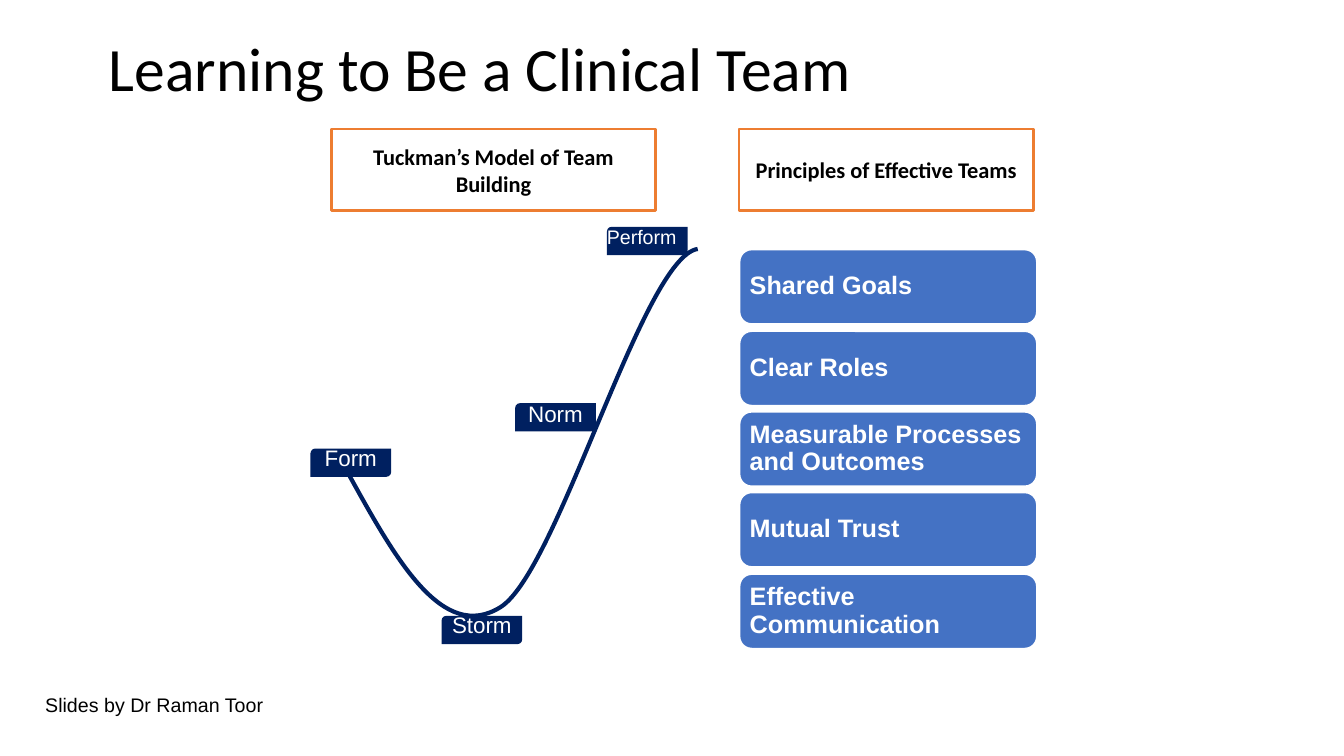
import dataclasses

import pptx
import pptx.dml.color
import pptx.enum.shapes
import pptx.enum.text
import pptx.oxml
import pptx.oxml.ns
import pptx.util

PX = 9144  # one hundredth of an inch, in EMU
SHAPE = pptx.enum.shapes.MSO_SHAPE
ALIGN = pptx.enum.text.PP_ALIGN
ANCHOR = pptx.enum.text.MSO_ANCHOR


@dataclasses.dataclass(frozen=True)
class Theme:
    black: str = "000000"
    white: str = "FFFFFF"
    navy: str = "002060"
    blue: str = "4472C4"
    orange: str = "ED7D31"
    heading_font: str = "Calibri"
    body_font: str = "Arial"
    title_size: int = 44
    bar_size: int = 18
    label_size: int = 16
    small_size: int = 14


THEME = Theme()


def color(code):
    return pptx.dml.color.RGBColor.from_string(code)


def emu(*lengths):
    return [length * PX for length in lengths]


def write(shape, text, size, ink, font=THEME.body_font, bold=False,
          align=ALIGN.LEFT, anchor=ANCHOR.TOP, insets=(10, 5), spacing=None, wrap=True):
    frame = shape.text_frame
    frame.text = text
    frame.word_wrap = wrap
    frame.auto_size = pptx.enum.text.MSO_AUTO_SIZE.NONE
    frame.vertical_anchor = anchor
    frame.margin_left = frame.margin_right = insets[0] * PX
    frame.margin_top = frame.margin_bottom = insets[1] * PX
    para = frame.paragraphs[0]
    para.alignment = align
    para.line_spacing = spacing
    span = para.runs[0]
    span.font.name = font
    span.font.size = pptx.util.Pt(size)
    span.font.bold = bold
    span.font.color.rgb = color(ink)


def draw_box(page, kind, box, fill, line=None):
    shape = page.shapes.add_shape(kind, *emu(*box))
    shape.shadow.inherit = False
    shape.fill.solid()
    shape.fill.fore_color.rgb = color(fill)
    if line:
        shape.line.color.rgb = color(line)
        shape.line.width = pptx.util.Pt(2)
    else:
        shape.line.fill.background()
    return shape


def add_title(page, box, text):
    title = page.shapes.title
    title.left, title.top, title.width, title.height = emu(*box)
    write(title, text, THEME.title_size, THEME.black, THEME.heading_font, spacing=0.9)


def add_heading(page, box, text):
    heading = draw_box(page, SHAPE.RECTANGLE, box, THEME.white, THEME.orange)
    write(heading, text, THEME.label_size, THEME.black, THEME.heading_font, bold=True,
          align=ALIGN.CENTER, anchor=ANCHOR.MIDDLE, insets=(11, 6))


def add_curve(page, box):
    left, top, width, height = box
    # Start, then two handles and an end point for each of the two curves
    offsets = [(0, 222), (47, 307), (94, 392), (152, 355), (209, 318), (293, 8), (width, 0)]
    points = [(left + x, top + y) for x, y in offsets]
    builder = page.shapes.build_freeform(*points[0], scale=float(PX))
    builder.add_line_segments(points[1:], close=False)
    curve = builder.convert_to_shape()

    # Turn each three straight segments into one Bezier segment
    outline = curve._element.find(".//" + pptx.oxml.ns.qn("a:path"))
    segments = outline.findall(pptx.oxml.ns.qn("a:lnTo"))
    for first in range(0, len(segments), 3):
        bezier = outline.makeelement(pptx.oxml.ns.qn("a:cubicBezTo"), {})
        for segment in segments[first:first + 3]:
            bezier.append(segment[0])
            outline.remove(segment)
        outline.append(bezier)
    # Fit the frame to the curve instead of to its handles
    outline.set("h", str(height))
    curve.height = height * PX

    curve.shadow.inherit = False
    curve.fill.background()
    curve.line.color.rgb = color(THEME.navy)
    curve.line.width = pptx.util.Pt(3)


def add_stages(page, box):
    left, top, width, height = box
    add_curve(page, (left + 37, top + 22, width - 37, height - 50))
    # Name, tag corner, rise and leftward widening of the label, type size
    stages = [
        ("Form", 0, 220, 9, 0, THEME.label_size),
        ("Storm", 130, 386, 10, 0, THEME.label_size),
        ("Norm", 203, 175, 8, 0, THEME.label_size),
        ("Perform", 294, 0, 7, 11, THEME.small_size),
    ]
    for name, x, y, rise, widen, size in stages:
        tag = (left + x, top + y, 80, 28)
        draw_box(page, SHAPE.ROUND_2_DIAG_RECTANGLE, tag, THEME.navy)
        label = page.shapes.add_textbox(
            *emu(tag[0] - widen, tag[1] - rise, tag[2] + widen, 37))
        write(label, name, size, THEME.white, align=ALIGN.CENTER)


def add_principles(page, box, names, gap):
    left, top, width, height = box
    bar_height = (height - gap * (len(names) - 1)) / len(names)
    for row, name in enumerate(names):
        bar_top = round(top + row * (bar_height + gap))
        bar = draw_box(page, SHAPE.ROUNDED_RECTANGLE,
                       (left, bar_top, width, round(bar_height)), THEME.blue, THEME.white)
        # The rounded corners already push the text in a little
        write(bar, name, THEME.bar_size, THEME.white, bold=True,
              anchor=ANCHOR.MIDDLE, insets=(7, 5), spacing=0.9)


def add_credit(page, box, text):
    credit = page.shapes.add_textbox(*emu(*box))
    write(credit, text, THEME.small_size, THEME.black, wrap=False)


def main():
    deck = pptx.Presentation()
    deck.slide_width, deck.slide_height = emu(1333, 750)
    page = deck.slides.add_slide(deck.slide_layouts[5])

    add_title(page, (98, 33, 906, 146), "Learning to Be a Clinical Team")
    # Left column: team stages along the curve
    add_stages(page, (308, 225, 384, 414))
    # Right column: stacked principles
    add_principles(page, (733, 247, 296, 397), [
        "Shared Goals", "Clear Roles", "Measurable Processes and Outcomes",
        "Mutual Trust", "Effective Communication"], gap=5.5)
    # Column headings
    add_heading(page, (329, 128, 321, 81), "Tuckman’s Model of Team Building")
    add_heading(page, (733, 128, 292, 81), "Principles of Effective Teams")
    add_credit(page, (35, 683, 240, 34), "Slides by Dr Raman Toor")
    deck.save("out.pptx")


if __name__ == "__main__":
    main()
